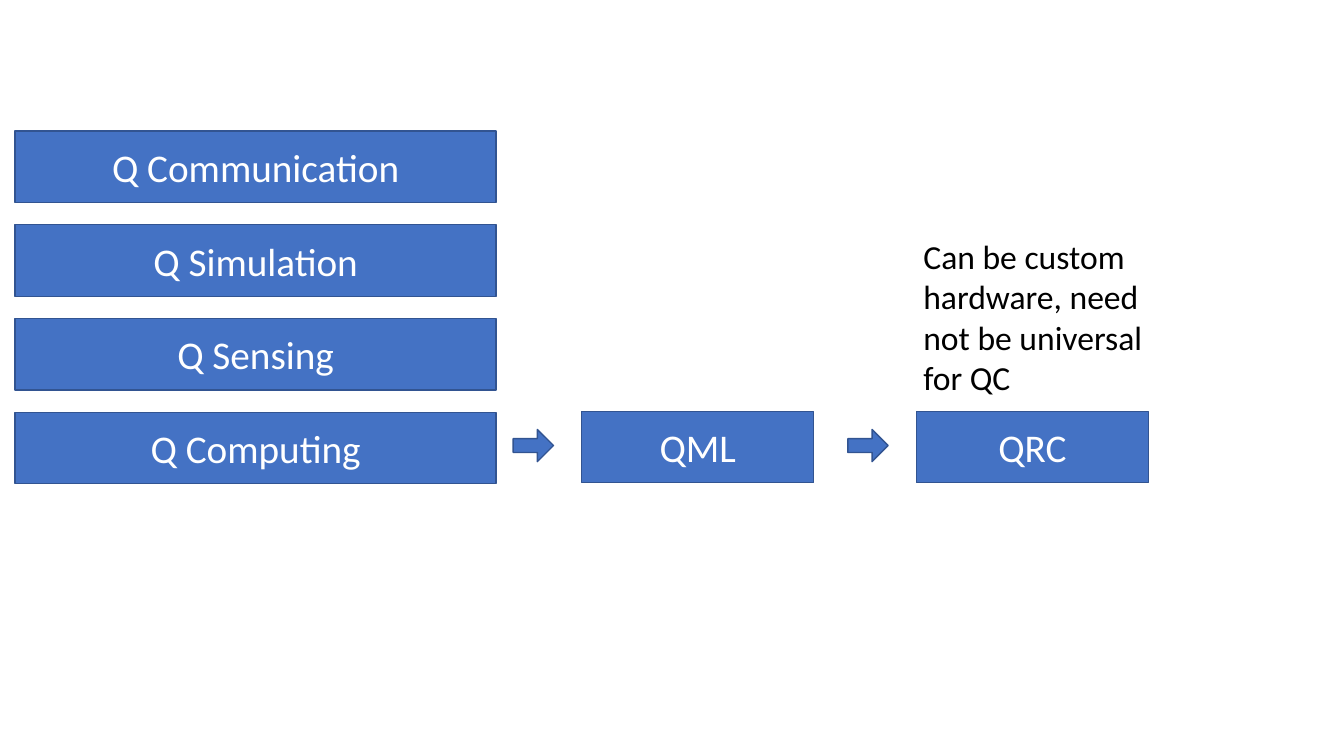
from pptx import Presentation
from pptx.dml.color import RGBColor
from pptx.enum.shapes import MSO_SHAPE
from pptx.enum.text import MSO_ANCHOR, MSO_AUTO_SIZE, PP_ALIGN
from pptx.util import Pt

RECTANGLE = MSO_SHAPE.RECTANGLE
RIGHT_ARROW = MSO_SHAPE.RIGHT_ARROW
MIDDLE = MSO_ANCHOR.MIDDLE
CENTER = PP_ALIGN.CENTER
FIT_SHAPE = MSO_AUTO_SIZE.SHAPE_TO_FIT_TEXT

BLUE = RGBColor(0x44, 0x72, 0xC4)
DARK_BLUE = RGBColor(0x32, 0x54, 0x91)
WHITE = RGBColor(0xFF, 0xFF, 0xFF)
BLACK = RGBColor(0x00, 0x00, 0x00)

FONT = "Calibri"
PX = 9144  # 100 px to the inch
BLANK_LAYOUT = 6

FIELDS = ("Q Communication", "Q Simulation", "Q Sensing", "Q Computing")
STAGES = ("QML", "QRC")
NOTE = "Can be custom hardware, need not be universal for QC"

FIELD_LEFT, FIELD_TOP, FIELD_WIDTH = 15, 130, 477
BOX_HEIGHT, FIELD_PITCH = 71, 93
STAGE_LEFT, STAGE_WIDTH, STAGE_PITCH = 577, 230, 332
STAGE_TOP = 408
ARROW_LEFT, ARROW_TOP, ARROW_WIDTH, ARROW_HEIGHT = 509, 426, 40, 32


def emu(*lengths):
    return [length * PX for length in lengths]


def add_text(paragraph, text, size, color):
    run = paragraph.add_run()
    run.text = text
    run.font.name = FONT
    run.font.size = Pt(size)
    run.font.color.rgb = color


def add_blue_shape(shapes, kind, left, top, width, height):
    shape = shapes.add_shape(kind, *emu(left, top, width, height))
    shape.shadow.inherit = False
    shape.fill.solid()
    shape.fill.fore_color.rgb = BLUE
    shape.line.color.rgb = DARK_BLUE
    shape.line.width = Pt(1)
    return shape


def add_box(shapes, text, left, top, width):
    box = add_blue_shape(shapes, RECTANGLE, left, top, width, BOX_HEIGHT)
    box.text_frame.vertical_anchor = MIDDLE
    paragraph = box.text_frame.paragraphs[0]
    paragraph.alignment = CENTER
    add_text(paragraph, text, 28, WHITE)


def add_arrow(shapes, left):
    arrow = add_blue_shape(shapes, RIGHT_ARROW, left, ARROW_TOP, ARROW_WIDTH, ARROW_HEIGHT)
    arrow.adjustments[0] = 0.43
    arrow.adjustments[1] = 0.5


def add_note(shapes, text, left, top, width, height):
    note = shapes.add_textbox(*emu(left, top, width, height))
    note.text_frame.word_wrap = True
    note.text_frame.auto_size = FIT_SHAPE
    add_text(note.text_frame.paragraphs[0], text, 24, BLACK)


def main():
    presentation = Presentation()
    presentation.slide_width, presentation.slide_height = emu(1333, 750)
    slide = presentation.slides.add_slide(presentation.slide_layouts[BLANK_LAYOUT])

    # Stack of quantum fields
    stack = slide.shapes.add_group_shape()
    for row, field in enumerate(FIELDS):
        add_box(stack.shapes, field, FIELD_LEFT, FIELD_TOP + row * FIELD_PITCH, FIELD_WIDTH)

    # Stages that follow from computing, each with its arrow
    for column, stage in enumerate(STAGES):
        offset = column * STAGE_PITCH
        group = slide.shapes.add_group_shape()
        add_box(group.shapes, stage, STAGE_LEFT + offset, STAGE_TOP, STAGE_WIDTH)
        add_arrow(group.shapes, ARROW_LEFT + offset)

    # Remark above the last stage
    add_note(slide.shapes, NOTE, 906, 229, 240, 172)

    presentation.save("out.pptx")


if __name__ == "__main__":
    main()
